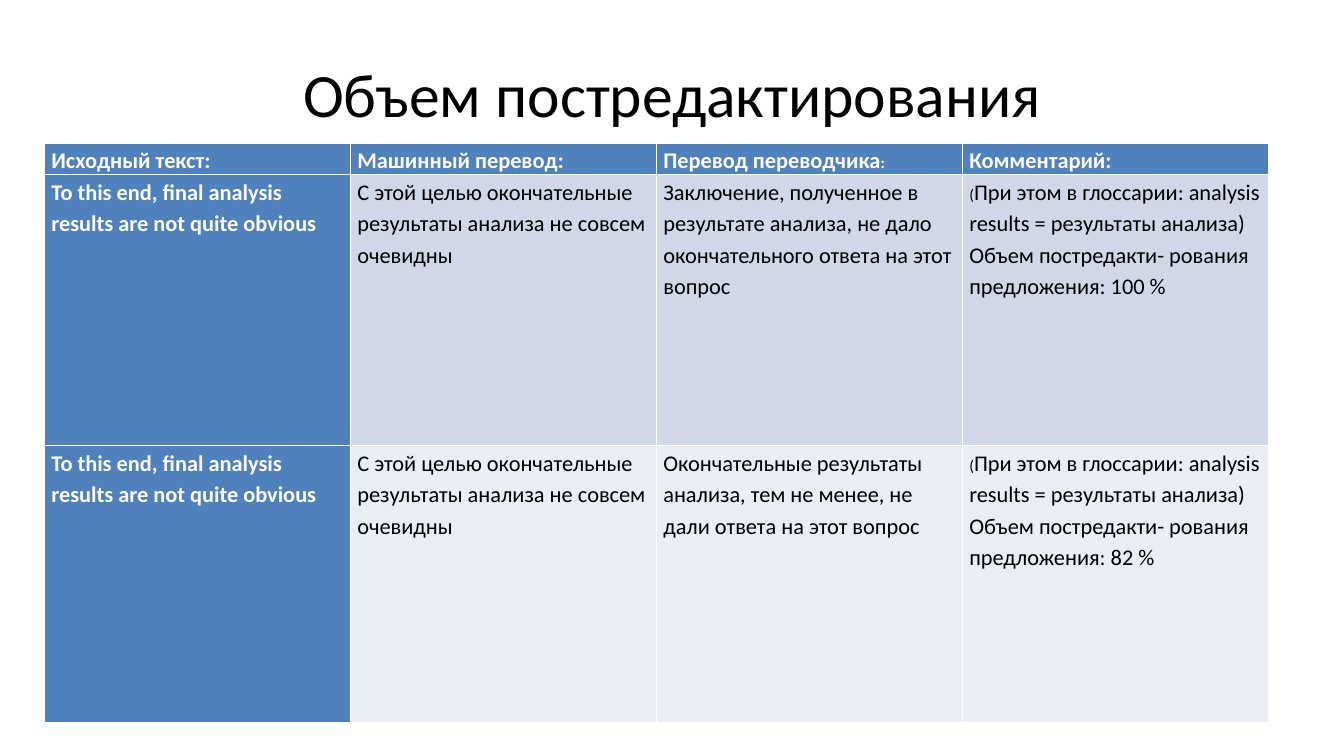
from dataclasses import dataclass

from pptx import Presentation
from pptx import util as u
from pptx.dml import color
from pptx.enum import text


@dataclass(frozen=True)
class Theme:
    font: str = "Calibri"
    head: int = 44
    body: int = 16
    small: int = 11
    black: str = "000000"
    white: str = "FFFFFF"
    blue: str = "4F81BD"
    bands: tuple = ("D0D8E8", "E9EDF4")


theme = Theme()


def style(par, size, ink, bold=False):
    par.font.name = theme.font
    par.font.size = u.Pt(size)
    par.font.bold = bold
    par.font.color.rgb = color.RGBColor.from_string(ink)


deck = Presentation()
deck.slide_width = u.Inches(13.33)
deck.slide_height = u.Inches(7.5)
slide = deck.slides.add_slide(deck.slide_layouts[5])

title = slide.shapes.title
title.left, title.top = u.Inches(0.67), u.Inches(0.3)
title.width, title.height = u.Inches(12), u.Inches(1.25)
title.text_frame.text = "Объем постредактирования"
title.text_frame.vertical_anchor = text.MSO_ANCHOR.MIDDLE
par = title.text_frame.paragraphs[0]
par.alignment = text.PP_ALIGN.CENTER
style(par, theme.head, theme.black)

source = "To this end, final analysis results are not quite obvious"
machine = "С этой целью окончательные результаты анализа не совсем очевидны"
note = ("При этом в глоссарии: analysis results = результаты анализа) "
        "Объем постредакти- рования предложения: ")
rows = [
    [["Исходный текст:"], ["Машинный перевод:"],
     ["Перевод переводчика", ":"], ["Комментарий:"]],
    [[source], [machine],
     ["Заключение, полученное в результате анализа, не дало "
      "окончательного ответа на этот вопрос"],
     ["(", note + "100 %"]],
    [[source], [machine],
     ["Окончательные результаты анализа, тем не менее, не дали "
      "ответа на этот вопрос"],
     ["(", note + "82 %"]],
]
heights = [0.31, 2.69, 2.75]

table = slide.shapes.add_table(
    len(rows), 4, u.Inches(0.44), u.Inches(1.42),
    u.Inches(12.14), u.Inches(sum(heights))).table
table.first_col = True
for col in table.columns:
    col.width = u.Inches(12.14 / 4)

for r, (row, height) in enumerate(zip(rows, heights)):
    table.rows[r].height = u.Inches(height)
    for c, parts in enumerate(row):
        cell = table.cell(r, c)
        cell.margin_left = cell.margin_right = u.Inches(0.07)
        cell.margin_top = cell.margin_bottom = 0
        label = r == 0 or c == 0
        fill = theme.blue if label else theme.bands[r - 1]
        cell.fill.solid()
        cell.fill.fore_color.rgb = color.RGBColor.from_string(fill)
        par = cell.text_frame.paragraphs[0]
        par.line_spacing = 1.15
        style(par, theme.body, theme.white if label else theme.black, label)
        for part in parts:
            run = par.add_run()
            run.text = part
            if len(part) == 1:
                run.font.size = u.Pt(theme.small)

deck.save("out.pptx")
